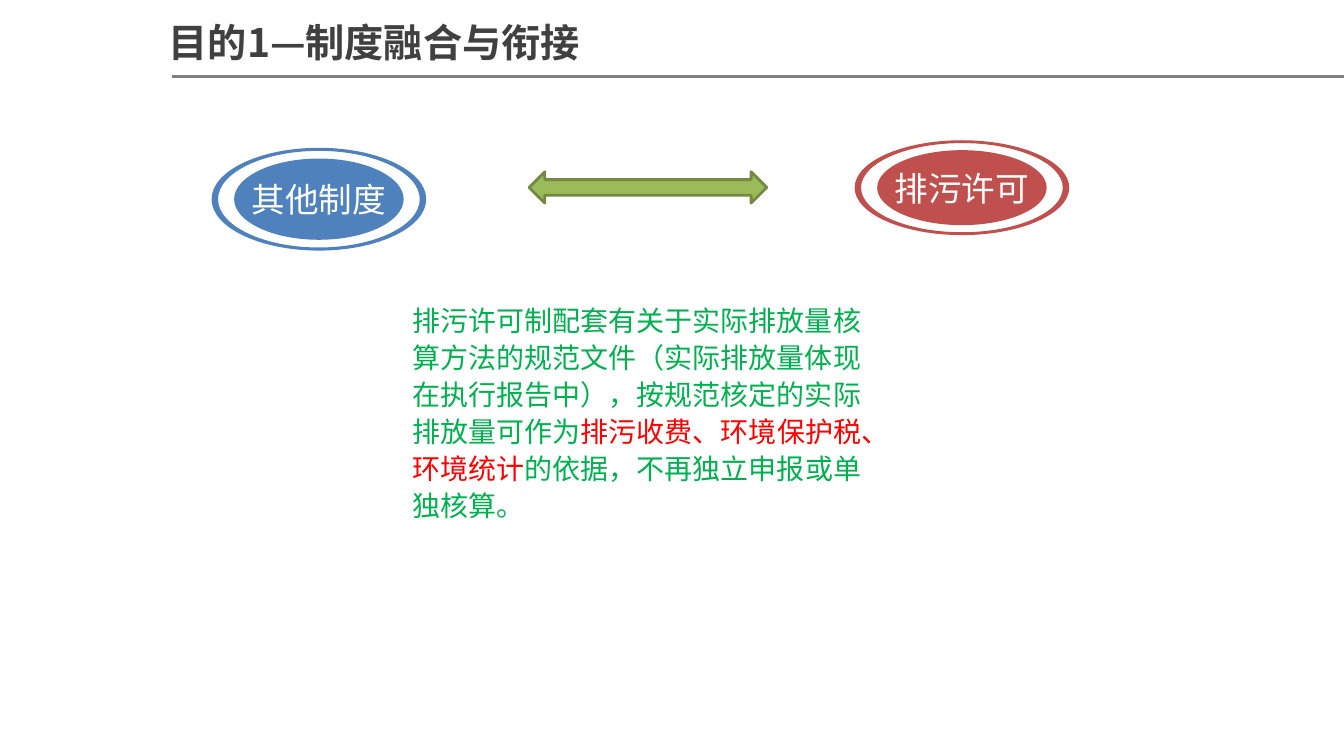
from dataclasses import dataclass

from lxml.etree import SubElement
from pptx import Presentation
from pptx.dml.color import RGBColor as RGB
from pptx.enum.shapes import MSO_CONNECTOR as CONNECTOR, MSO_SHAPE as SHAPE
from pptx.enum.text import MSO_ANCHOR as ANCHOR, MSO_AUTO_SIZE as AUTO_SIZE, PP_ALIGN as ALIGN
from pptx.oxml.ns import qn
from pptx.util import Cm, Pt


@dataclass(frozen=True)
class Theme:
    """Colours, fonts and type sizes of the slide."""
    title: str = "404040"
    rule: str = "808080"
    blue: str = "4F81BD"
    red: str = "C0504D"
    arrow: str = "9BBB59"
    arrow_edge: str = "738A42"
    body: str = "00B050"
    accent: str = "FF0000"
    white: str = "FFFFFF"
    cjk: str = "Noto Sans CJK SC"
    latin: str = "Arial"
    title_size: float = 28
    badge_size: float = 24
    body_size: float = 20
    body_pitch: float = 26.5
    line_width: float = 2


THEME = Theme()
RINGS = (0.79, 0.94, 1)
KAPPA = 0.55


def add_run(p, text, size, color, font=THEME.cjk, bold=False):
    """Append one formatted run to a paragraph."""
    r = p.add_run()
    r.text = text
    r.font.size, r.font.bold, r.font.name = Pt(size), bold, font
    r.font.color.rgb = RGB.from_string(color)
    SubElement(r.font._element, qn("a:ea")).set("typeface", THEME.cjk)


def set_title(s, text):
    """Place and format the title placeholder."""
    sp = s.shapes.title
    sp.left, sp.top, sp.width, sp.height = Cm(4), Cm(0.33), Cm(16.13), Cm(1.45)
    tf = sp.text_frame
    tf.word_wrap, tf.auto_size = True, AUTO_SIZE.NONE
    tf.vertical_anchor = ANCHOR.MIDDLE
    p = tf.paragraphs[0]
    p.alignment = ALIGN.LEFT
    add_run(p, text, THEME.title_size, THEME.title, bold=True)


def add_rule(s, left, right, y):
    """Draw the horizontal rule under the title."""
    line = s.shapes.add_connector(CONNECTOR.STRAIGHT, left, y, right, y)
    line.line.color.rgb = RGB.from_string(THEME.rule)
    line.line.width = Pt(THEME.line_width)
    SubElement(line._element.spPr, qn("a:effectLst"))


def ellipse_points(cx, cy, rx, ry):
    """Return the start and the twelve Bezier points of an ellipse."""
    points = [(0, -1)]
    for x, y in ((0, -1), (1, 0), (0, 1), (-1, 0)):
        nx, ny = -y, x
        points += [(x + KAPPA * nx, y + KAPPA * ny), (nx + KAPPA * x, ny + KAPPA * y), (nx, ny)]
    return [(round(cx + rx * x), round(cy + ry * y)) for x, y in points]


def curve_segments(sp):
    """Turn each three line segments of a freeform into one Bezier curve."""
    lines = list(sp._element.iter(qn("a:lnTo")))
    for i in range(0, len(lines), 3):
        curve = SubElement(lines[i].getparent(), qn("a:cubicBezTo"))
        lines[i].addprevious(curve)
        for line in lines[i:i + 3]:
            curve.append(line[0])
            line.getparent().remove(line)


def add_badge(s, text, cx, cy, width, height, color):
    """Draw a filled ellipse inside a ring, with a centred label."""
    rings = [ellipse_points(cx, cy, k * width / 2, k * height / 2) for k in RINGS]
    builder = s.shapes.build_freeform(*rings[0][0])
    builder.add_line_segments(rings[0][1:])
    for start, *points in rings[1:]:
        builder.move_to(*start)
        builder.add_line_segments(points)
    sp = builder.convert_to_shape()
    curve_segments(sp)
    sp.shadow.inherit = False
    sp.fill.solid()
    sp.fill.fore_color.rgb = RGB.from_string(color)
    sp.line.fill.background()
    tf = sp.text_frame
    tf.word_wrap, tf.vertical_anchor = True, ANCHOR.MIDDLE
    p = tf.paragraphs[0]
    p.alignment = ALIGN.CENTER
    add_run(p, text, THEME.badge_size, THEME.white, THEME.latin)


def add_double_arrow(s, left, top, width, height):
    """Draw the two-way arrow between the badges."""
    sp = s.shapes.add_shape(SHAPE.LEFT_RIGHT_ARROW, left, top, width, height)
    sp.shadow.inherit = False
    sp.fill.solid()
    sp.fill.fore_color.rgb = RGB.from_string(THEME.arrow)
    sp.line.color.rgb = RGB.from_string(THEME.arrow_edge)
    sp.line.width = Pt(THEME.line_width)


def add_body(s, left, top, width, height, runs):
    """Add the explanatory paragraph from (text, colour) runs."""
    tf = s.shapes.add_textbox(left, top, width, height).text_frame
    tf.word_wrap, tf.vertical_anchor = True, ANCHOR.MIDDLE
    tf.margin_bottom = Cm(1.24)
    p = tf.paragraphs[0]
    p.line_spacing = Pt(THEME.body_pitch)
    for text, color in runs:
        add_run(p, text, THEME.body_size, color)


def main():
    """Build and save the slide."""
    prs = Presentation()
    prs.slide_width, prs.slide_height = Cm(33.88), Cm(19.05)
    s = prs.slides.add_slide(prs.slide_layouts[5])
    add_rule(s, Cm(4.34), prs.slide_width, Cm(1.93))
    set_title(s, "目的1—制度融合与衔接")
    add_badge(s, "其他制度", Cm(8.04), Cm(5.02), Cm(5.41), Cm(2.59), THEME.blue)
    add_badge(s, "排污许可", Cm(24.25), Cm(4.73), Cm(5.41), Cm(2.39), THEME.red)
    add_body(s, Cm(10.15), Cm(7.32), Cm(12.4), Cm(7.19), [
        ("排污许可制配套有关于实际排放量核算方法的规范文件（实际排放量体现在执行报告中），"
         "按规范核定的实际排放量可作为", THEME.body),
        ("排污收费、环境保护税、环境统计", THEME.accent),
        ("的依据，不再独立申报或单独核算。", THEME.body),
    ])
    add_double_arrow(s, Cm(13.34), Cm(4.33), Cm(5.99), Cm(0.79))
    prs.save("out.pptx")


if __name__ == "__main__":
    main()
